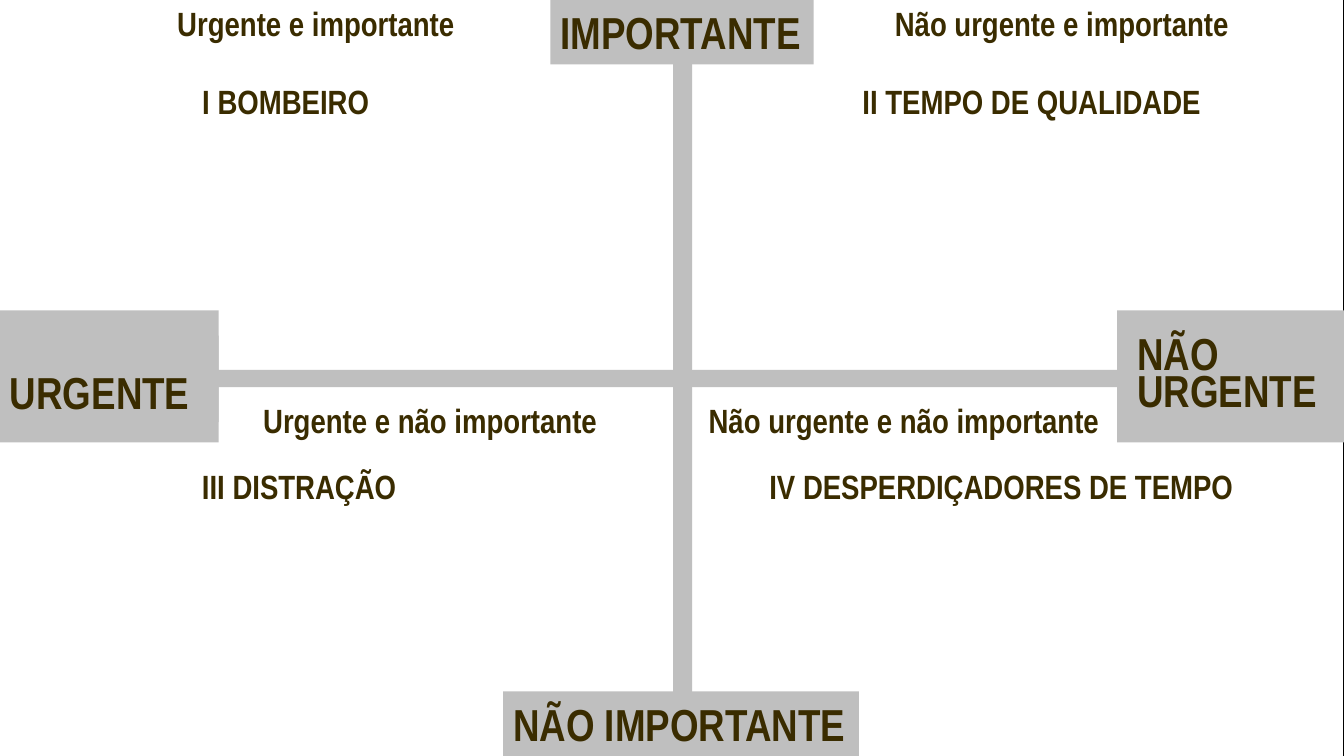
import pptx
import pptx.util
import pptx.dml.color
import pptx.enum.shapes
import pptx.enum.text

WIDTH, HEIGHT = 13.33, 7.5
GREY, BROWN, WHITE = "BFBFBF", "3A2C00", "FFFFFF"
ALIGN = pptx.enum.text.PP_ALIGN
ANCHOR = pptx.enum.text.MSO_ANCHOR


def color(hex_code):
    """Turn a hex string into a colour."""
    return pptx.dml.color.RGBColor.from_string(hex_code)


def inches(box):
    """Turn a left, top, width, height box into lengths."""
    return [pptx.util.Inches(length) for length in box]


def block(slide, box, fill):
    """Draw a plain filled rectangle."""
    panel = slide.shapes.add_shape(pptx.enum.shapes.MSO_SHAPE.RECTANGLE, *inches(box))
    panel.shadow.inherit = False
    panel.fill.solid()
    panel.fill.fore_color.rgb = color(fill)
    panel.line.fill.background()
    return panel


def write(holder, text, size, align, spacing=1.0, anchor=ANCHOR.TOP, wrap=True):
    """Put bold brown text in a shape, one paragraph a line."""
    frame = holder.text_frame
    frame.word_wrap = wrap
    frame.vertical_anchor = anchor
    frame.text = text
    for paragraph in frame.paragraphs:
        paragraph.alignment = align
        paragraph.line_spacing = spacing
        for run in paragraph.runs:
            run.font.name = "Arial Narrow"
            run.font.size = pptx.util.Pt(size)
            run.font.bold = True
            run.font.color.rgb = color(BROWN)


def backdrop(slide):
    """Lay a white page over the green to black background."""
    fill = slide.background.fill
    fill.gradient()
    fill.gradient_angle = 0
    for stop, shade in zip(fill.gradient_stops, ("006600", "000000")):
        stop.color.rgb = color(shade)
    block(slide, (0, 0, WIDTH - 0.01, HEIGHT), WHITE)


def axes(slide, box):
    """Draw the crossing bars of the matrix."""
    left, top, width, height = box
    block(slide, (left, top + height / 2 - 0.08, width, 0.17), GREY)
    block(slide, (left + width / 2 + 0.01, top, 0.19, height), GREY)


def side_end(slide, box, label, label_box):
    """Draw a grey block at a side with its label set low."""
    block(slide, box, GREY)
    left, top, width, height = label_box
    label_panel = block(slide, (box[0] + left, box[1] + top, width, height), GREY)
    write(label_panel, label, 32, ALIGN.LEFT, 0.7, ANCHOR.BOTTOM)


def pole_end(slide, box, label):
    """Draw a labelled block at the top or bottom of the matrix."""
    write(block(slide, box, GREY), label, 32, ALIGN.LEFT, wrap=False)


def quadrant(slide, box, heading, heading_span, name, name_span):
    """Write a quadrant's heading and name; spans are shares of its width."""
    left, top, width, height = box
    rows = ((heading, heading_span, 0.016, 0.42, 0.8),
            (name, name_span, 0.2, 0.5, 1.0))
    for text, (start, share), row, text_height, spacing in rows:
        place = (left + start * width, top + row * height, share * width, text_height)
        write(slide.shapes.add_textbox(*inches(place)), text, 24, ALIGN.CENTER, spacing)


def build():
    """Build the time management matrix slide."""
    deck = pptx.Presentation()
    deck.slide_width, deck.slide_height = inches((WIDTH, HEIGHT))
    slide = deck.slides.add_slide(deck.slide_layouts[6])
    backdrop(slide)
    axes(slide, (0, 0, WIDTH, HEIGHT))
    side_end(slide, (0, 3.08, 2.17, 1.31), "URGENTE", (0, 0.25, 2.17, 0.86))
    side_end(slide, (11.08, 3.08, 2.25, 1.31), "NÃO\nURGENTE", (0.1, 0.23, 2.15, 0.86))
    pole_end(slide, (5.46, 0, 2.61, 0.64), "IMPORTANTE")
    pole_end(slide, (4.99, 6.86, 3.53, 0.64), "NÃO IMPORTANTE")

    half = WIDTH / 2
    upper, lower = (0, HEIGHT / 2), (3.95, 3.1)
    quadrants = (
        (0, upper, "Urgente e importante", (0.1, 0.74),
         "I BOMBEIRO", (0.26, 0.33)),
        (half, upper, "Não urgente e importante", (0.21, 0.74),
         "II TEMPO DE QUALIDADE", (0.09, 0.89)),
        (0, lower, "Urgente e não importante", (0.27, 0.74),
         "III DISTRAÇÃO", (0.04, 0.81)),
        (half, lower, "Não urgente e não importante", (-0.07, 0.83),
         "IV DESPERDIÇADORES DE TEMPO", (-0.02, 1.02)),
    )
    for left, (top, height), *texts in quadrants:
        quadrant(slide, (left, top, half, height), *texts)
    deck.save("out.pptx")


if __name__ == "__main__":
    build()
